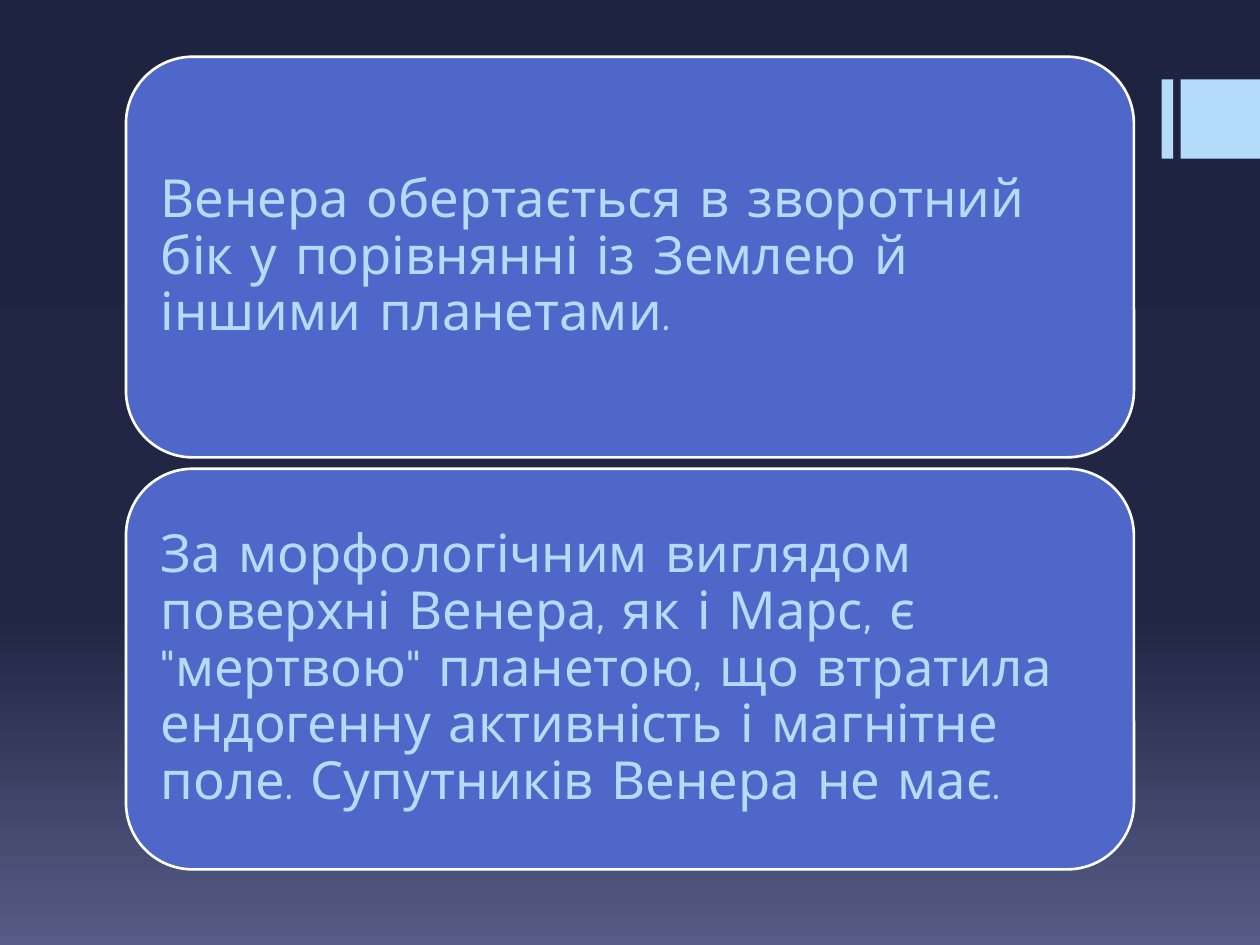
from copy import deepcopy
from dataclasses import dataclass

from pptx import Presentation
from pptx.dml.color import RGBColor
from pptx.enum.shapes import MSO_SHAPE
from pptx.enum.text import MSO_ANCHOR, PP_ALIGN
from pptx.oxml.ns import qn
from pptx.util import Inches, Pt

RECTANGLE = MSO_SHAPE.RECTANGLE
ROUNDED = MSO_SHAPE.ROUNDED_RECTANGLE
MIDDLE = MSO_ANCHOR.MIDDLE
LEFT = PP_ALIGN.LEFT


@dataclass(frozen=True)
class Theme:
    background: tuple = ((0, "1E233F"), (0.65, "202643"), (1, "575C86"))
    accent: str = "B4DCFA"
    card: str = "4E67C8"
    outline: str = "FFFFFF"
    font: str = "Comic Neue"
    body_size: int = 30
    outline_width: float = 1.5


THEME = Theme()

FACTS = (
    "Венера обертається в зворотний бік у порівнянні із Землею й іншими планетами.",
    "За морфологічним виглядом поверхні Венера, як і Марс, є \"мертвою\" планетою, "
    "що втратила ендогенну активність і магнітне поле. Супутників Венера не має.",
)


def add_block(page, kind, left, top, width, height, fill, line=None):
    block = page.shapes.add_shape(
        kind, Inches(left), Inches(top), Inches(width), Inches(height))
    block.shadow.inherit = False
    block.fill.solid()
    block.fill.fore_color.rgb = RGBColor.from_string(fill)
    if line:
        block.line.color.rgb = RGBColor.from_string(line)
        block.line.width = Pt(THEME.outline_width)
    else:
        block.line.fill.background()


def add_text(page, text, left, top, width, height, *, size, color,
             inset=0.12, line_spacing=0.9):
    box = page.shapes.add_textbox(
        Inches(left), Inches(top), Inches(width), Inches(height))
    frame = box.text_frame
    frame.word_wrap = True
    frame.vertical_anchor = MIDDLE
    frame.margin_left = frame.margin_right = Inches(inset)
    frame.margin_top = frame.margin_bottom = Inches(inset)
    para = frame.paragraphs[0]
    para.alignment = LEFT
    para.line_spacing = line_spacing
    span = para.add_run()
    span.text = text
    span.font.name = THEME.font
    span.font.size = Pt(size)
    span.font.color.rgb = RGBColor.from_string(color)


def paint_background(page):
    fill = page.background.fill
    fill.gradient()
    fill.gradient_angle = 270
    # A new gradient has two stops; a third is needed
    stop_list = next(page.element.iter(qn("a:gsLst")))
    stop_list.append(deepcopy(stop_list[-1]))
    for stop, (position, color) in zip(fill.gradient_stops, THEME.background):
        stop.position = position
        stop.color.rgb = RGBColor.from_string(color)


def add_corner_tab(page, left, top, width, height, bar=0.09):
    add_block(page, RECTANGLE, left, top, bar, height, THEME.accent)
    add_block(page, RECTANGLE, left + width - height, top, height, height, THEME.accent)


def add_fact_cards(page, facts, left, top, width, height, gap=0.09, padding=0.155):
    card_height = (height - gap * (len(facts) - 1)) / len(facts)
    for index, fact in enumerate(facts):
        card_top = top + index * (card_height + gap)
        add_block(page, ROUNDED, left, card_top, width, card_height,
                  THEME.card, THEME.outline)
        add_text(page, fact, left + padding, card_top + padding,
                 width - 2 * padding, card_height - 2 * padding,
                 size=THEME.body_size, color=THEME.accent)


def main():
    deck = Presentation()
    deck.slide_width, deck.slide_height = Inches(10), Inches(7.5)
    page = deck.slides.add_slide(deck.slide_layouts[6])
    paint_background(page)
    # Decoration at the right edge
    add_corner_tab(page, 9.22, 0.63, 0.78, 0.63)
    # Two stacked facts
    add_fact_cards(page, FACTS, 1, 0.45, 8, 6.45)
    deck.save("out.pptx")


if __name__ == "__main__":
    main()
